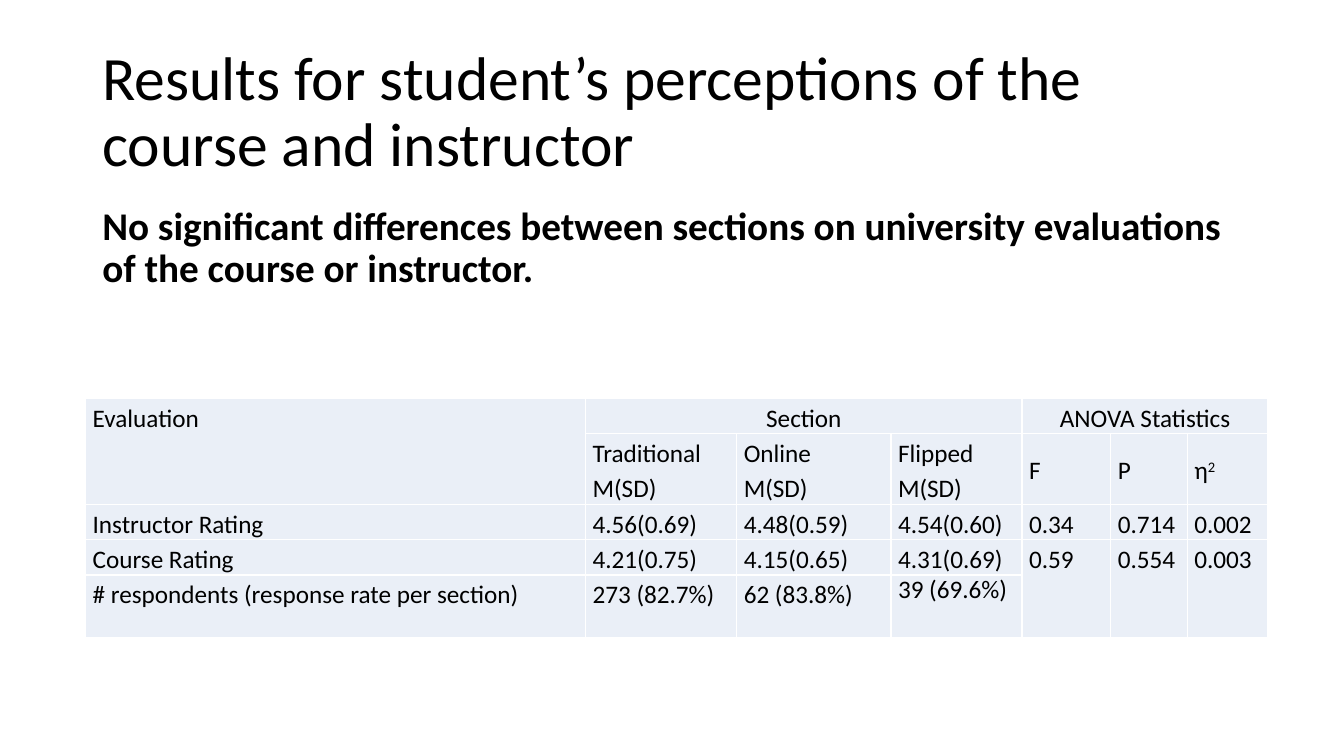
from lxml.etree import SubElement
from pptx import Presentation
from pptx.dml.color import RGBColor
from pptx.enum.text import MSO_ANCHOR as Anchor, PP_ALIGN as Align
from pptx.oxml.ns import qn
from pptx.util import Pt

FONT = "Calibri"
COLORS = {"text": "000000", "cell": "EAEFF7", "border": "FFFFFF"}
COLUMN_WIDTHS = [357.1, 108, 110.2, 93.6, 63.4, 54.7, 57.6]
ROW_HEIGHTS = [25.2, 50.5, 25.2, 25.2, 44.6]
ROWS = [
    ["Evaluation", "Section", "", "", "ANOVA Statistics", "", ""],
    ["", "Traditional\nM(SD)", "Online\nM(SD)", "Flipped\nM(SD)", "F", "P", "η"],
    ["Instructor Rating", "4.56(0.69)", "4.48(0.59)", "4.54(0.60)", "0.34", "0.714", "0.002"],
    ["Course Rating", "4.21(0.75)", "4.15(0.65)", "4.31(0.69)", "0.59", "0.554", "0.003"],
    ["# respondents (response rate per section)", "273 (82.7%)", "62 (83.8%)",
     "39 (69.6%)", "", "", ""],
]
MERGES = [(0, 0, 1, 0), (0, 1, 0, 3), (0, 4, 0, 6)] + [(3, c, 4, c) for c in (4, 5, 6)]


def format_font(font, size, bold=False):
    font.name = FONT
    font.size = Pt(size)
    font.bold = bold
    font.color.rgb = RGBColor.from_string(COLORS["text"])


def add_text(slide, box, text, size, bold=False, anchor=Anchor.TOP, space_before=0):
    text_frame = slide.shapes.add_textbox(*map(Pt, box)).text_frame
    text_frame.word_wrap = True
    text_frame.vertical_anchor = anchor
    text_frame.text = text
    paragraph = text_frame.paragraphs[0]
    paragraph.line_spacing = 0.9
    paragraph.space_before = Pt(space_before)
    format_font(paragraph.runs[0].font, size, bold)


def add_borders(cell):
    properties = cell._tc.get_or_add_tcPr()
    for side in ("a:lnL", "a:lnR", "a:lnT", "a:lnB"):
        line = SubElement(properties, qn(side), w=str(Pt(1)))
        fill = SubElement(line, qn("a:solidFill"))
        SubElement(fill, qn("a:srgbClr"), val=COLORS["border"])


def format_cell(cell, text, line_spacing):
    cell.margin_left = cell.margin_right = Pt(5)
    cell.margin_top = cell.margin_bottom = 0
    add_borders(cell)
    cell.fill.solid()
    cell.fill.fore_color.rgb = RGBColor.from_string(COLORS["cell"])
    cell.text_frame.text = text
    for paragraph in cell.text_frame.paragraphs:
        paragraph.line_spacing = line_spacing
        format_font(paragraph.font, 18)
        for run in paragraph.runs:
            format_font(run.font, 18)


def add_ratings_table(slide, box):
    frame = slide.shapes.add_table(len(ROWS), len(COLUMN_WIDTHS), *map(Pt, box))
    table = frame.table
    table.first_row = table.horz_banding = False
    for column, width in zip(table.columns, COLUMN_WIDTHS):
        column.width = Pt(width)
    for row, height in zip(table.rows, ROW_HEIGHTS):
        row.height = Pt(height)
    for row_index, row in enumerate(ROWS):
        for column_index, text in enumerate(row):
            spacing = 1 if (row_index, column_index) == (4, 3) else 1.15
            format_cell(table.cell(row_index, column_index), text, spacing)
    for top, left, bottom, right in MERGES:
        table.cell(top, left).merge(table.cell(bottom, right))
    for column_index in (1, 4):
        table.cell(0, column_index).text_frame.paragraphs[0].alignment = Align.CENTER
    for column_index in (4, 5, 6):
        table.cell(1, column_index).vertical_anchor = Anchor.MIDDLE
    exponent = table.cell(1, 6).text_frame.paragraphs[0].add_run()
    exponent.text = "2"
    format_font(exponent.font, 18)
    exponent._r.get_or_add_rPr().set("baseline", "30000")


def main():
    presentation = Presentation()
    presentation.slide_width, presentation.slide_height = Pt(960), Pt(540)
    slide = presentation.slides.add_slide(presentation.slide_layouts[6])
    add_text(slide, (66, 28.8, 828, 104.4),
             "Results for student’s perceptions of the course and instructor",
             44, anchor=Anchor.MIDDLE)
    add_text(slide, (66, 143.8, 828, 94.3),
             "No significant differences between sections on university evaluations "
             "of the course or instructor.", 28, bold=True, space_before=10)
    add_ratings_table(slide, (61.2, 284.6, sum(COLUMN_WIDTHS), sum(ROW_HEIGHTS)))
    presentation.save("out.pptx")


if __name__ == "__main__":
    main()
